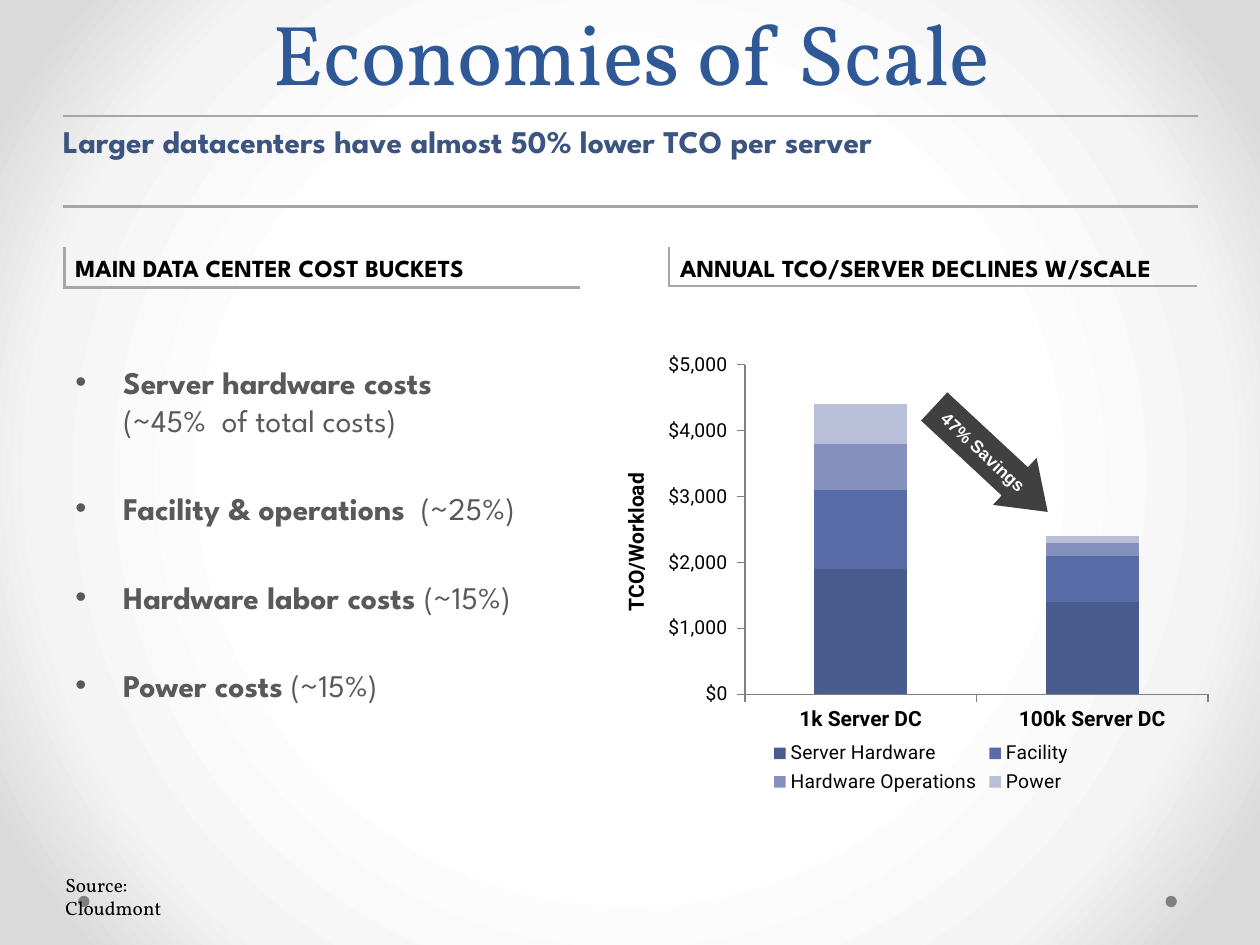
"""Build the Economies of Scale slide."""
from lxml import etree
from pptx import Presentation
from pptx.chart.data import CategoryChartData as ChartData
from pptx.dml.color import RGBColor
from pptx.enum.chart import XL_CHART_TYPE as Kind, XL_LEGEND_POSITION as Place, XL_TICK_MARK as Tick
from pptx.enum.shapes import MSO_CONNECTOR as Link, MSO_SHAPE as Shape
from pptx.enum.text import MSO_ANCHOR as Anchor, PP_ALIGN as Align
from pptx.oxml import parse_xml
from pptx.oxml.ns import nsdecls, qn
from pptx.util import Inches, Pt

BLACK = RGBColor(0x00, 0x00, 0x00)
WHITE = RGBColor(0xFF, 0xFF, 0xFF)
BLUE = RGBColor(0x2F, 0x58, 0x97)
NAVY = RGBColor(0x3B, 0x54, 0x80)
INK = RGBColor(0x59, 0x59, 0x59)
DARK = RGBColor(0x40, 0x40, 0x40)
RULE = RGBColor(0xA6, 0xA6, 0xA6)
GRAY = RGBColor(0x80, 0x80, 0x80)
TONES = [RGBColor(0x4A, 0x5C, 0x8D), RGBColor(0x58, 0x6C, 0xA8),
         RGBColor(0x85, 0x90, 0xBF), RGBColor(0xB9, 0xBE, 0xD9)]
SANS = "League Spartan"
SERIF = "Vollkorn"


def add_box(x, y, w, h, pad=0.1, anchor=Anchor.TOP):
    box = slide.shapes.add_textbox(Inches(x), Inches(y), Inches(w), Inches(h))
    frame = box.text_frame
    frame.word_wrap = True
    frame.vertical_anchor = anchor
    frame.margin_left = frame.margin_right = Inches(pad)
    return box


def write(para, text, size=18, color=BLACK, font=SANS, bold=False, before=0, align=Align.LEFT):
    para.alignment = align
    para.space_before = Pt(before)
    for i, line in enumerate(text.split("\n")):
        if i:
            para.add_line_break()
        if line:
            run = para.add_run()
            run.text = line
            run.font.size = Pt(size)
            run.font.name = font
            run.font.bold = bold
            run.font.color.rgb = color


deck = Presentation()
deck.slide_width, deck.slide_height = Inches(10), Inches(7.5)
slide = deck.slides.add_slide(deck.slide_layouts[6])

slide.background.fill.gradient()
grad = slide.element.find(".//" + qn("a:gradFill"))
stops = "".join(f'<a:gs pos="{at}000"><a:srgbClr val="{tone}"/></a:gs>'
                for at, tone in [(50, "FFFFFF"), (76, "F4F4F4"), (92, "DADADA")])
grad.getparent().replace(grad, parse_xml(
    f'<a:gradFill {nsdecls("a")} rotWithShape="1"><a:gsLst>{stops}</a:gsLst><a:path path="circle">'
    '<a:fillToRect l="50000" t="50000" r="50000" b="50000"/></a:path></a:gradFill>'))

for x in (9.25, 0.62):
    dot = slide.shapes.add_shape(Shape.OVAL, Inches(x), Inches(7.11), Inches(0.09), Inches(0.09))
    dot.shadow.inherit = False
    dot.fill.solid()
    dot.fill.fore_color.rgb = GRAY
    dot.line.fill.background()

title = add_box(0.51, 0.17, 9, 0.48, pad=0, anchor=Anchor.MIDDLE).text_frame.paragraphs[0]
title.line_spacing = Pt(58)
write(title, "Economies of Scale", size=48.6, color=BLUE, font=SERIF, align=Align.CENTER)

claim = add_box(0.5, 0.92, 9, 0.75, pad=0).text_frame.paragraphs[0]
write(claim, "Larger datacenters have almost 50% lower TCO per server", color=NAVY, bold=True, before=3.6)

for x, head in [(0.5, "MAIN DATA CENTER COST BUCKETS"), (5.3, "ANNUAL TCO/SERVER DECLINES W/SCALE")]:
    para = add_box(x, 1.94, 4.29, 0.35, anchor=Anchor.BOTTOM).text_frame.paragraphs[0]
    write(para, head, size=14, bold=True, before=2.8)

for x1, y1, x2, y2 in [(0.5, 0.92, 9.51, 0.92), (0.5, 1.64, 9.51, 1.64),
                       (0.51, 1.96, 0.51, 2.28), (4.6, 2.28, 0.5, 2.28),
                       (5.31, 1.96, 5.31, 2.27), (9.5, 2.27, 5.3, 2.27)]:
    rule = slide.shapes.add_connector(Link.STRAIGHT, Inches(x1), Inches(y1), Inches(x2), Inches(y2))
    rule.line.color.rgb = RULE
    rule.line.width = Pt(1.5)
    etree.SubElement(rule.element.spPr, qn("a:effectLst"))

costs = [("Server hardware costs\n", "(~45%  of total costs)"), ("Facility & operations", "  (~25%)"),
         ("Hardware labor costs ", "(~15%)"), ("Power costs", " (~15%)")]
body = add_box(0.5, 2.83, 3.74, 3.83).text_frame
for i, (name, share) in enumerate(costs):
    para = body.add_paragraph() if i else body.paragraphs[0]
    gap = 29 if i else 3.6
    write(para, name, color=INK, bold=True, before=gap)
    write(para, share, color=INK, before=gap)
    props = para._p.get_or_add_pPr()
    props.set("marL", str(Inches(0.38)))
    props.set("indent", str(Inches(-0.38)))
    etree.SubElement(props, qn("a:buFont")).set("typeface", "Arial")
    etree.SubElement(props, qn("a:buChar")).set("char", "•")

data = ChartData()
data.categories = ["1k Server DC", "100k Server DC"]
for name, vals in [("Server Hardware", (1900, 1400)), ("Facility", (1200, 700)),
                   ("Hardware Operations", (700, 200)), ("Power ", (600, 100))]:
    data.add_series(name, vals)
chart = slide.shapes.add_chart(Kind.COLUMN_STACKED, Inches(4.75), Inches(2.71),
                               Inches(5.12), Inches(3.63), data).chart
chart.font.size = Pt(12)
chart.font.name = "Roboto"
chart.font.color.rgb = BLACK
chart.has_title = False
chart.has_legend = True
chart.legend.position = Place.BOTTOM
chart.legend.include_in_layout = False
chart.legend.font.size = Pt(11)

plot = chart.plots[0]
plot.gap_width = 150
plot.overlap = 100
plot.vary_by_categories = False
for part, tone in zip(plot.series, TONES):
    part.format.fill.solid()
    part.format.fill.fore_color.rgb = tone

cat, val = chart.category_axis, chart.value_axis
for axis in (cat, val):
    axis.has_major_gridlines = False
    axis.major_tick_mark = Tick.OUTSIDE
    axis.minor_tick_mark = Tick.NONE
    axis.format.line.color.rgb = GRAY
cat.tick_labels.font.bold = True
cat.tick_labels.font.size = Pt(12)
val.minimum_scale, val.maximum_scale, val.major_unit = 0, 5000, 1000
val.tick_labels.font.size = Pt(11)
val.tick_labels.number_format = '"$"#,##0_);\\("$"#,##0\\)'
val.tick_labels.number_format_is_linked = False
write(val.axis_title.text_frame.paragraphs[0], "TCO/Workload", size=12, font="Roboto", bold=True,
      align=Align.CENTER)

area = chart.element.find(".//" + qn("c:plotArea"))
for old in area.findall(qn("c:layout")):
    area.remove(old)
spots = "".join(f'<c:{key} val="{num}"/>' for key, num in [
    ("layoutTarget", "inner"), ("xMode", "edge"), ("yMode", "edge"),
    ("x", 0.227), ("y", 0.051), ("w", 0.718), ("h", 0.721)])
area.insert(0, parse_xml(
    f'<c:layout {nsdecls("c")}><c:manualLayout>{spots}</c:manualLayout></c:layout>'))

arrow = slide.shapes.add_shape(Shape.RIGHT_ARROW, Inches(7.25), Inches(3.39), Inches(1.23), Inches(0.51))
arrow.shadow.inherit = False
arrow.adjustments[0], arrow.adjustments[1] = 0.6, 0.7
arrow.rotation = 42.9
arrow.fill.solid()
arrow.fill.fore_color.rgb = DARK
arrow.line.fill.background()

label = add_box(7.27, 3.49, 1.15, 0.27, anchor=Anchor.MIDDLE)
label.rotation = 42.9
write(label.text_frame.paragraphs[0], "47% Savings", size=10, color=WHITE, font="Arial", bold=True, before=2)

credit = add_box(0.42, 6.88, 1.35, 0.29).text_frame.paragraphs[0]
write(credit, "Source:\nCloudmont", size=11, font=SERIF)

deck.save("out.pptx")
